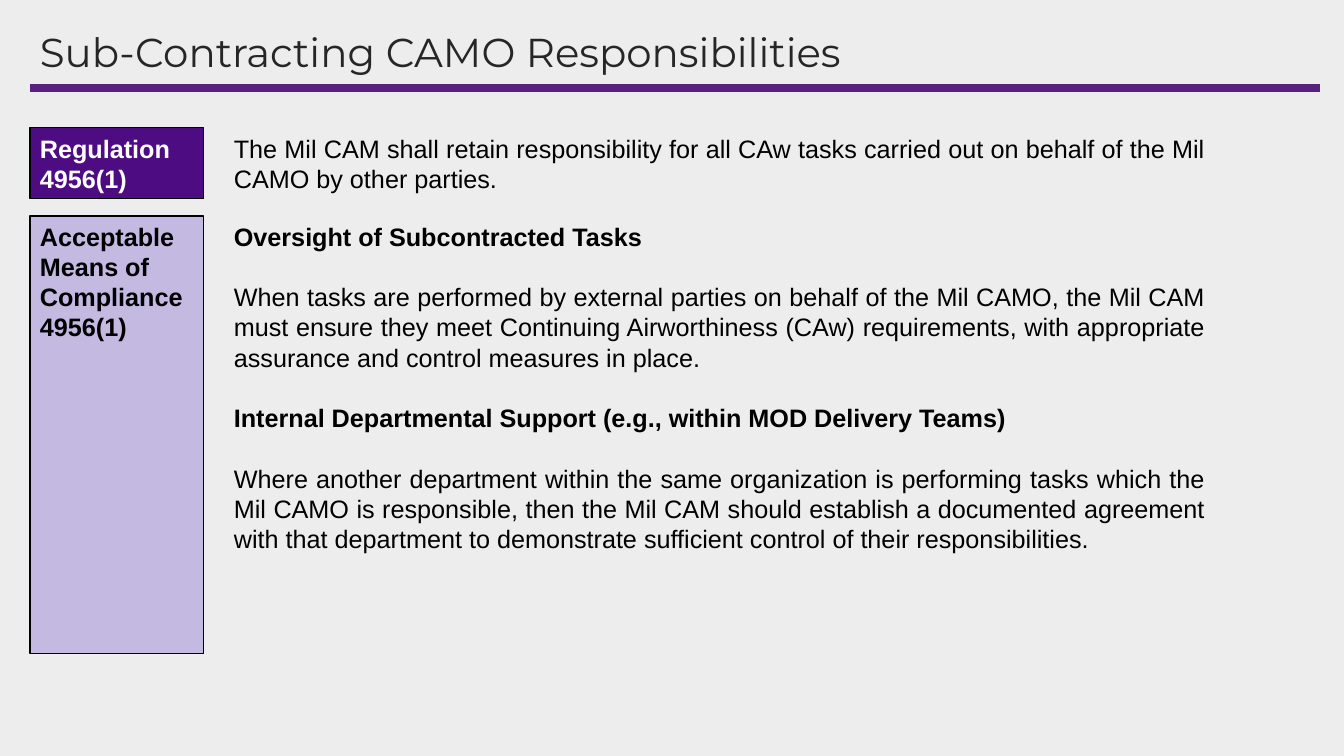
from pptx import Presentation
from pptx.dml.color import RGBColor
from pptx.enum.shapes import MSO_CONNECTOR as Connector, MSO_SHAPE as Shape
from pptx.enum.text import MSO_ANCHOR as Anchor, PP_ALIGN as Align
from pptx.oxml.ns import qn
from pptx.util import Emu, Pt
from lxml.etree import SubElement

COLOURS = {"background": "EDEDED", "rule": "56227D", "title": "262626",
           "regulation": "4E0C82", "compliance": "C3B9E1",
           "black": "000000", "white": "FFFFFF"}
EMU_PER_PX = 914400 / 100.8
BODY_SIZE = 18
BLANK_LINE = 21.6

# Columns, in px
LEFT, LABEL_WIDTH = 30, 174
TEXT_LEFT, TEXT_WIDTH = 224, 991


def px(length):
    return Emu(round(length * EMU_PER_PX))


def colour(name):
    return RGBColor.from_string(COLOURS[name])


class ResponsibilitySlide:
    def __init__(self, presentation):
        self.slide = presentation.slides.add_slide(presentation.slide_layouts[6])
        fill = self.slide.background.fill
        fill.solid()
        fill.fore_color.rgb = colour("background")

    def set_text(self, shape, paragraphs, ink, font="Arial", size=BODY_SIZE,
                 anchor=Anchor.TOP, **layout):
        """Fill a shape with (text, bold) paragraphs."""
        frame = shape.text_frame
        frame.word_wrap = True
        frame.vertical_anchor = anchor
        for index, (text, bold) in enumerate(paragraphs):
            paragraph = frame.add_paragraph() if index else frame.paragraphs[0]
            if index:
                paragraph.space_before = Pt(BLANK_LINE)
            for name, value in layout.items():
                setattr(paragraph, name, value)
            run = paragraph.add_run()
            run.text = text
            for name, value in {"name": font, "size": Pt(size), "bold": bold}.items():
                setattr(run.font, name, value)
            run.font.color.rgb = colour(ink)

    def text(self, left, top, width, height, paragraphs, ink="black", **style):
        box = self.slide.shapes.add_textbox(px(left), px(top), px(width), px(height))
        self.set_text(box, paragraphs, ink, **style)

    def label(self, top, height, text, fill, ink):
        box = self.slide.shapes.add_shape(
            Shape.RECTANGLE, px(LEFT), px(top), px(LABEL_WIDTH), px(height))
        box.shadow.inherit = False
        box.fill.solid()
        box.fill.fore_color.rgb = colour(fill)
        box.line.color.rgb = colour("black")
        box.line.width = Pt(0.75)
        self.set_text(box, [(text, True)], ink, alignment=Align.LEFT)

    def rule(self, left, right, y):
        line = self.slide.shapes.add_connector(
            Connector.STRAIGHT, px(left), px(y), px(right), px(y))
        line.line.color.rgb = colour("rule")
        line.line.width = Pt(6)
        SubElement(line._element.spPr, qn("a:effectLst"))


def main():
    presentation = Presentation()
    presentation.slide_width, presentation.slide_height = px(1344), px(756)
    page = ResponsibilitySlide(presentation)

    # Heading
    page.rule(LEFT, 1320, 88)
    page.text(LEFT, 28, 1290, 53, [("Sub-Contracting CAMO Responsibilities", False)],
              "title", font="Montserrat", size=28.8, anchor=Anchor.MIDDLE,
              line_spacing=0.9)

    # Rows: top, label height, text height, label, fill, ink, paragraphs
    rows = [
        (128, 71, 71, "Regulation 4956(1)", "regulation", "white", [
            ("The Mil CAM shall retain responsibility for all CAw tasks carried out "
             "on behalf of the Mil CAMO by other parties.", False)]),
        (216, 438, 407, "Acceptable Means of Compliance 4956(1)", "compliance", "black", [
            ("Oversight of Subcontracted Tasks", True),
            ("When tasks are performed by external parties on behalf of the Mil CAMO, "
             "the Mil CAM must ensure they meet Continuing Airworthiness (CAw) "
             "requirements, with appropriate assurance and control measures in place.",
             False),
            ("Internal Departmental Support (e.g., within MOD Delivery Teams)", True),
            ("Where another department within the same organization is performing "
             "tasks which the Mil CAMO is responsible, then the Mil CAM should "
             "establish a documented agreement with that department to demonstrate "
             "sufficient control of their responsibilities.", False)]),
    ]
    for top, label_height, text_height, label, fill, ink, paragraphs in rows:
        page.label(top, label_height, label, fill, ink)
        page.text(TEXT_LEFT, top, TEXT_WIDTH, text_height, paragraphs,
                  alignment=Align.JUSTIFY)

    presentation.save("out.pptx")


if __name__ == "__main__":
    main()
